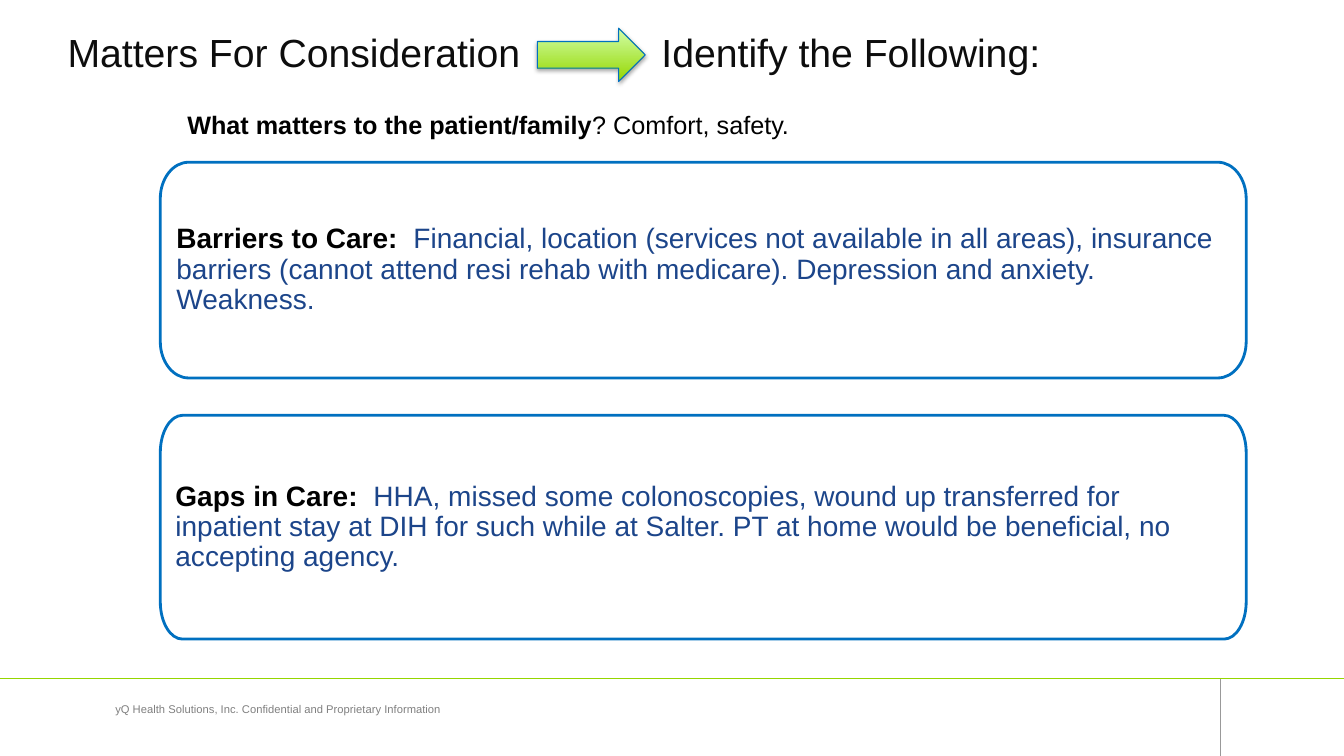
from lxml.etree import SubElement
from pptx import Presentation
from pptx.dml.color import RGBColor
from pptx.enum.shapes import MSO_CONNECTOR as Connector, MSO_SHAPE as Shape
from pptx.enum.text import MSO_ANCHOR as Anchor, PP_ALIGN as Align
from pptx.oxml.ns import qn
from pptx.util import Inches, Pt

WIDTH, HEIGHT = 13.33, 7.5
FONT = "Arial"
GREEN, BLUE, GREY, BLACK, NAVY = "95D600", "0070C0", "808080", "000000", "1C458A"

TITLE = "Matters For Consideration\tIdentify the Following:"
QUESTION = [("What matters to the patient/family", True, BLACK),
            ("? Comfort, safety.", False, BLACK)]
FOOTER = "yQ Health Solutions, Inc. Confidential and Proprietary Information"
PANEL_LEFT, PANEL_WIDTH = 1.59, 10.77
# top, height, corner radii (across, down), inset, heading, body
PANELS = [
    (1.61, 2.14, (0.28, 0.36), 0.16, "Barriers to Care:  ",
     "Financial, location (services not available in all areas), insurance barriers "
     "(cannot attend resi rehab with medicare). Depression and anxiety. Weakness."),
    (4.12, 2.22, (0.22, 0.37), 0.15, "Gaps in Care:  ",
     "HHA, missed some colonoscopies, wound up transferred for inpatient stay at DIH "
     "for such while at Salter. PT at home would be beneficial, no accepting agency."),
]
FOOTER_TOP, FOOTER_SPLIT = 6.73, 12.1
RULES = [((FOOTER_SPLIT, HEIGHT), (FOOTER_SPLIT, FOOTER_TOP), "999999"),
         ((0, FOOTER_TOP), (WIDTH, FOOTER_TOP), GREEN)]


def color(value):
    return RGBColor.from_string(value)


def inches(*lengths):
    return [Inches(length) for length in lengths]


def set_insets(frame, inset):
    frame.margin_left = frame.margin_right = Inches(inset)
    frame.margin_top = frame.margin_bottom = Inches(inset)


def write_spans(para, spans, size):
    """Fill a paragraph with (text, bold, colour) spans."""
    para.font.name, para.font.size = FONT, Pt(size)
    for text, bold, ink in spans:
        span = para.add_run()
        span.text = text
        span.font.bold = bold
        span.font.color.rgb = color(ink)


def add_text(page, area, spans, size, align=Align.LEFT):
    frame = page.shapes.add_textbox(*inches(*area)).text_frame
    frame.word_wrap = True
    frame.paragraphs[0].alignment = align
    write_spans(frame.paragraphs[0], spans, size)


def add_rule(page, start, end, ink):
    rule = page.shapes.add_connector(Connector.STRAIGHT, *inches(*start, *end))
    rule.line.color.rgb = color(ink)
    rule.line.width = Pt(0.5)
    SubElement(rule._element.spPr, qn("a:effectLst"))


def corner_points(left, top, width, height, radii):
    """Start, two handles and end of each corner, clockwise from top left."""
    across, down = radii
    right, bottom = left + width, top + height
    corners = [(left, top, 1, 1), (right, top, -1, 1),
               (right, bottom, -1, -1), (left, bottom, 1, -1)]
    points = []
    for index, (x, y, inward, downward) in enumerate(corners):
        upright = [(x, y + downward * down * share) for share in (1, 0.45)]
        level = [(x + inward * across * share, y) for share in (0.45, 1)]
        curve = upright + level
        points += curve if index % 2 == 0 else curve[::-1]
    return [inches(*point) for point in points]


def curve_corners(shape):
    """Turn the three segments that follow each corner's start into one curve."""
    segments = list(shape._element.iter(qn("a:lnTo")))
    for first in range(0, 12 + 1, 4):
        group = segments[first:first + 3]
        curve = SubElement(group[0].getparent(), qn("a:cubicBezTo"))
        group[0].addprevious(curve)
        for segment in group:
            curve.append(segment[0])
            segment.getparent().remove(segment)


def add_panel(page, top, height, radii, inset, heading, body):
    points = corner_points(PANEL_LEFT, top, PANEL_WIDTH, height, radii)
    builder = page.shapes.build_freeform(*points[0])
    builder.add_line_segments(points[1:], close=True)
    panel = builder.convert_to_shape()
    curve_corners(panel)
    panel.shadow.inherit = False
    panel.fill.solid()
    panel.fill.fore_color.rgb = color("FFFFFF")
    panel.line.color.rgb = color(BLUE)
    panel.line.width = Pt(2)
    frame = panel.text_frame
    frame.word_wrap = True
    frame.vertical_anchor = Anchor.MIDDLE
    set_insets(frame, inset)
    para = frame.paragraphs[0]
    para.alignment = Align.LEFT
    para.line_spacing = 0.9
    write_spans(para, [(heading, True, BLACK), (body, False, NAVY)], 20)


def add_title(page):
    title = page.shapes.title
    title.left, title.top, title.width, title.height = inches(0.67, 0.28, 10.25, 0.52)
    frame = title.text_frame
    frame.vertical_anchor = Anchor.TOP
    set_insets(frame, 0)
    para = frame.paragraphs[0]
    para.alignment = Align.LEFT
    tabs = SubElement(para._p.get_or_add_pPr(), qn("a:tabLst"))
    SubElement(tabs, qn("a:tab"), pos=str(Inches(5.89)), algn="l")
    write_spans(para, [(TITLE, False, "0D0D0D")], 28)


def add_arrow(page):
    arrow = page.shapes.add_shape(Shape.RIGHT_ARROW, *inches(5.33, 0.28, 1.07, 0.53))
    arrow.fill.gradient()
    arrow.fill.gradient_angle = 90
    for stop, position, ink in zip(arrow.fill.gradient_stops, (0, 1), (GREEN, "D2FFA9")):
        stop.position = position
        stop.color.rgb = color(ink)
    arrow.line.color.rgb = color(BLUE)
    arrow.line.width = Pt(0.75)
    arrow.shadow.inherit = False
    effects = arrow._element.spPr.find(qn("a:effectLst"))
    shadow = SubElement(effects, qn("a:outerShdw"), blurRad=str(Pt(3.1)),
                        dist=str(Pt(1.8)), dir="5400000", rotWithShape="0")
    ink = SubElement(shadow, qn("a:srgbClr"), val=BLACK)
    SubElement(ink, qn("a:alpha"), val="35000")


def main():
    deck = Presentation()
    deck.slide_width, deck.slide_height = inches(WIDTH, HEIGHT)
    page = deck.slides.add_slide(deck.slide_layouts[5])
    for rule in RULES:
        add_rule(page, *rule)
    add_text(page, (0.42, 6.92, 4.68, 0.42), [(FOOTER, False, GREY)], 8, Align.CENTER)
    add_title(page)
    add_arrow(page)
    for panel in PANELS:
        add_panel(page, *panel)
    add_text(page, (1.76, 1.04, 6.67, 0.4), QUESTION, 18)
    deck.save("out.pptx")


if __name__ == "__main__":
    main()
